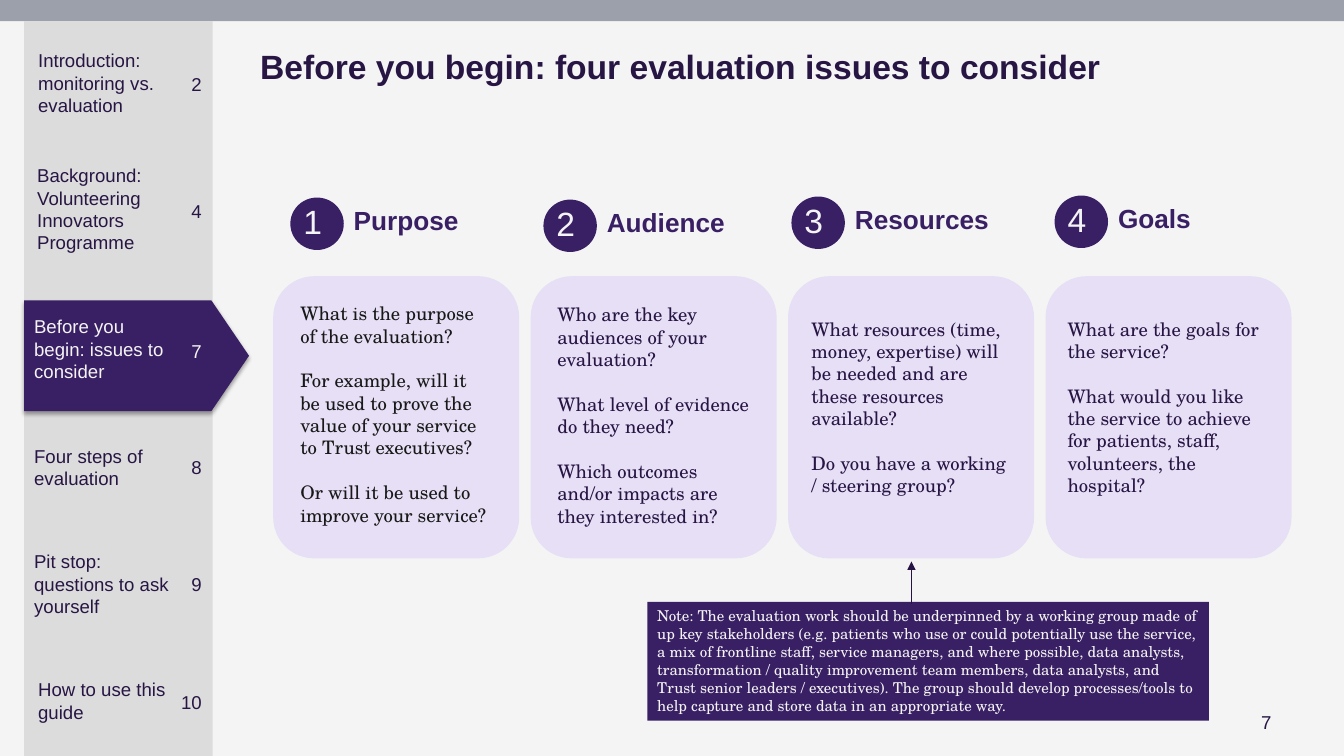
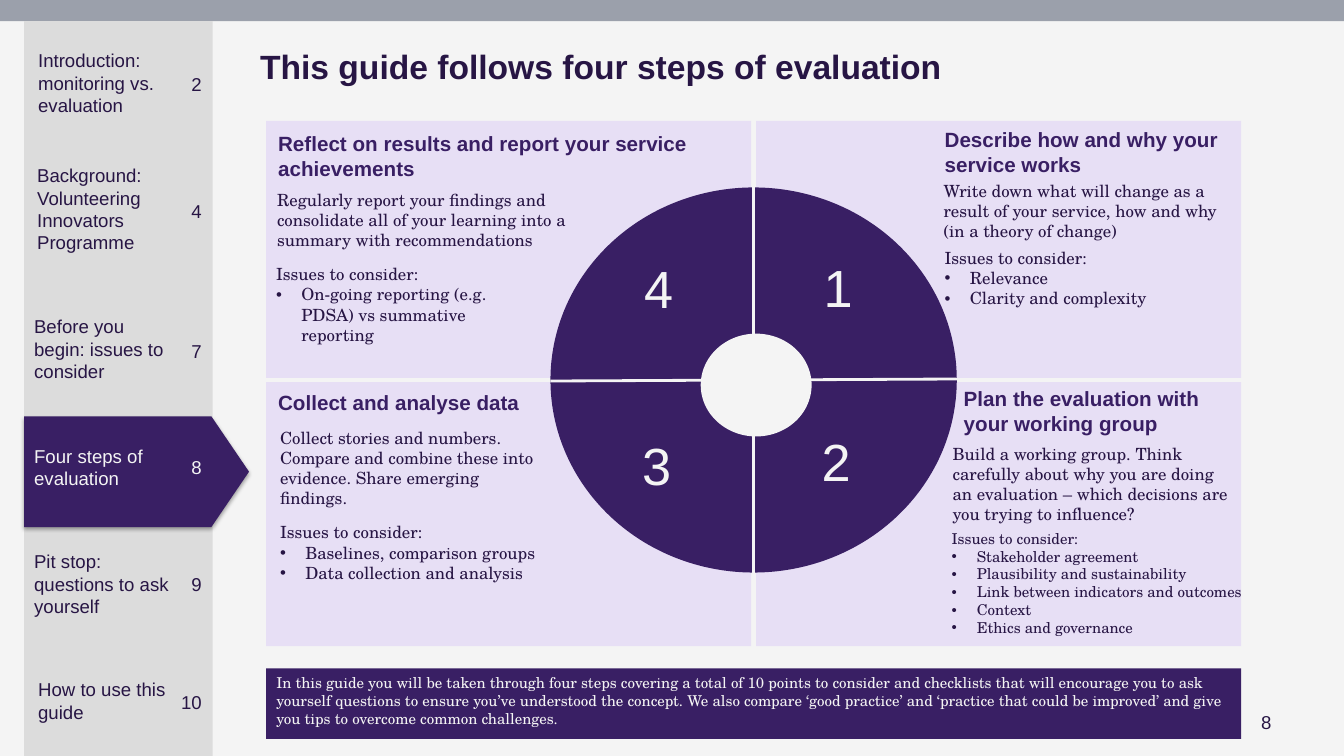
from lxml.etree import SubElement
from pptx import Presentation
from pptx.dml.color import RGBColor
from pptx.enum.shapes import MSO_CONNECTOR, MSO_SHAPE
from pptx.enum.text import MSO_ANCHOR, MSO_AUTO_SIZE, PP_ALIGN
from pptx.oxml.ns import qn
from pptx.util import Inches, Pt

# Shared style
COLORS = {
    "background": "F4F4F4", "band": "9BA0AB", "panel": "DCDCDC",
    "purple": "391F64", "lilac": "E7DFF5", "ink": "271544",
    "arrow": "261344", "black": "181818", "white": "F4F4F4",
}
SANS, SERIF = "Arial", "TeX Gyre Schola"

# Navigation: label, label left, label top, page, page top
NAVIGATION = [
    ("Introduction: monitoring vs. evaluation", 0.28, 0.44, 2, 0.67),
    ("Background: Volunteering Innovators Programme", 0.27, 1.58, 4, 1.93),
    ("Before you begin: issues to consider", 0.24, 3.08, 7, 3.32),
    ("Four steps of evaluation", 0.24, 4.36, 8, 4.47),
    ("Pit stop: questions to ask yourself", 0.24, 5.41, 9, 5.63),
    ("How to use this guide", 0.28, 6.68, 10, 6.81),
]

# Issues: heading, badge left and top, text left, top and width, colour, questions
ISSUES = [
    ("Purpose", 2.88, 1.96, 2.88, 2.95, 2.08, "black", [
        "What is the purpose of the evaluation?",
        "For example, will it be used to prove the value of your service "
        "to Trust executives?",
        "Or will it be used to improve your service?"]),
    ("Audience", 5.39, 1.98, 5.43, 2.96, 2.16, "ink", [
        "Who are the key audiences of your evaluation?",
        "What level of evidence do they need?",
        "Which outcomes and/or impacts are they interested in?"]),
    ("Resources", 7.85, 1.95, 7.95, 3.1, 2.16, "ink", [
        "What resources (time, money, expertise) will be needed and are "
        "these resources available?",
        "Do you have a working / steering group?"]),
    ("Goals", 10.46, 1.94, 10.49, 3.1, 2.16, "ink", [
        "What are the goals for the service?",
        "What would you like the service to achieve for patients, staff, "
        "volunteers, the hospital?"]),
]
NOTE = (
    "Note: The evaluation work should be underpinned by a working group made "
    "of up key stakeholders (e.g. patients who use or could potentially use "
    "the service, a mix of frontline staff, service managers, and where "
    "possible, data analysts, transformation / quality improvement team "
    "members, data analysts, and Trust senior leaders / executives). The group "
    "should develop processes/tools to help capture and store data in an "
    "appropriate way.")

# Steps: each text comes with its left, top, width and height
STEPS = [
    {"number": ("1", 8.07, 2.48),
     "heading": ("Describe how and why your service works", 9.27, 1.21, 2.98, 0.59),
     "summary": ("Write down what will change as a result of your service, "
                 "how and why (in a theory of change)", 9.26, 1.74, 3.12, 0.71),
     "issues": (["Relevance", "Clarity and complexity"], 9.27, 2.41, 2.98, 0.86),
     "issue_size": 12},
    {"number": ("2", 8.05, 4.21),
     "heading": ("Plan the evaluation with your working group",
                 9.46, 3.78, 2.88, 0.59),
     "summary": ("Build a working group. Think carefully about why you are doing "
                 "an evaluation – which decisions are you trying to influence?",
                 9.35, 4.35, 2.98, 0.91),
     "issues": (["Stakeholder agreement", "Plausibility and sustainability",
                 "Link between indicators and outcomes", "Context",
                 "Ethics and governance"], 9.34, 5.2, 3.25, 1.18),
     "issue_size": 10.7},
    {"number": ("3", 6.27, 4.25),
     "heading": ("Collect and analyse data", 2.66, 3.82, 2.64, 0.35),
     "summary": ("Collect stories and numbers. Compare and combine these into "
                 "evidence. Share emerging findings.", 2.68, 4.19, 2.8, 0.71),
     "issues": (["Baselines, comparison groups", "Data collection and analysis"],
                2.68, 5.13, 3.3, 0.71),
     "issue_size": 12},
    {"number": ("4", 6.29, 2.49),
     "heading": ("Reflect on results and report your service achievements",
                 2.66, 1.25, 4.46, 0.59),
     "summary": ("Regularly report your findings and consolidate all of your "
                 "learning into a summary with recommendations",
                 2.65, 1.83, 3.33, 0.71),
     "issues": (["On-going reporting (e.g. PDSA) vs summative reporting"],
                2.64, 2.57, 2.83, 0.71),
     "issue_size": 12},
]
BANNER = (
    "In this guide you will be taken through four steps covering a total of 10 "
    "points to consider and checklists that will encourage you to ask yourself "
    "questions to ensure you’ve understood the concept. We also compare ‘good "
    "practice’ and ‘practice that could be improved’ and give you tips to "
    "overcome common challenges.")


# Drawing helpers
def rgb(name):
    return RGBColor.from_string(COLORS[name])


def place(shape, left, top, width, height):
    shape.left, shape.top = Inches(left), Inches(top)
    shape.width, shape.height = Inches(width), Inches(height)


def write(shape, lines, size, color="ink", font=SANS, bold=False,
          align=PP_ALIGN.LEFT, anchor=MSO_ANCHOR.TOP, gap=0):
    frame = shape.text_frame
    frame.text = "\n".join(lines)
    frame.word_wrap = True
    frame.auto_size = MSO_AUTO_SIZE.NONE
    frame.vertical_anchor = anchor
    for index, paragraph in enumerate(frame.paragraphs):
        paragraph.alignment = align
        paragraph.space_before = Pt(gap if index else 0)
        for run in paragraph.runs:
            run.font.name, run.font.size, run.font.bold = font, Pt(size), bold
            run.font.color.rgb = rgb(color)


def set_bullet(paragraph, character=None):
    properties = paragraph._p.get_or_add_pPr()
    indent = Inches(0.25) if character else 0
    properties.set("marL", str(indent))
    properties.set("indent", str(-indent))
    if character:
        SubElement(properties, qn("a:buFont"), typeface="Arial")
        SubElement(properties, qn("a:buChar"), char=character)
    else:
        SubElement(properties, qn("a:buNone"))


def add_text(shapes, lines, left, top, width, height, size, **style):
    box = shapes.add_textbox(*map(Inches, (left, top, width, height)))
    write(box, lines, size, **style)
    return box


def add_block(shapes, kind, left, top, width, height, color):
    block = shapes.add_shape(kind, *map(Inches, (left, top, width, height)))
    block.shadow.inherit = False
    block.fill.solid()
    block.fill.fore_color.rgb = rgb(color)
    block.line.fill.background()
    return block


def add_line(shapes, start, end, color, width, arrow=False):
    line = shapes.add_connector(MSO_CONNECTOR.STRAIGHT, *map(Inches, start + end))
    line.line.color.rgb = rgb(color)
    line.line.width = Pt(width)
    properties = line.element.spPr
    if arrow:
        SubElement(properties.find(qn("a:ln")), qn("a:tailEnd"), type="triangle")
    SubElement(properties, qn("a:effectLst"))


def add_soft_shadow(shape):
    effects = shape.element.spPr.find(qn("a:effectLst"))
    shadow = SubElement(effects, qn("a:outerShdw"), blurRad=str(Pt(3.1)),
                        dist=str(Pt(1.8)), dir="5400000", rotWithShape="0")
    color = SubElement(shadow, qn("a:srgbClr"), val="000000")
    SubElement(color, qn("a:alpha"), val="35000")


# Parts shared by the slides
def prepare_master(presentation, slide):
    master = presentation.slide_master
    master.background.fill.solid()
    master.background.fill.fore_color.rgb = rgb("background")
    for area, color in (((0.24, 0.21, 1.87, 7.29), "panel"),
                        ((0, 0, 13.33, 0.21), "band")):
        block = add_block(slide.shapes, MSO_SHAPE.RECTANGLE, *area, color)
        master.shapes.element.insert(2, block.element)


def add_frame(slide, title, current_page):
    shapes = slide.shapes
    place(shapes.title, 2.48, 0.4, 10.19, 0.52)
    write(shapes.title, [title], 24, bold=True, anchor=MSO_ANCHOR.MIDDLE)
    for label, left, top, page, page_top in NAVIGATION:
        color = "ink"
        if page == current_page:
            color = "white"
            marker = add_block(shapes, MSO_SHAPE.PENTAGON,
                               0.24, page_top - 0.34, 2.23, 1.1, "purple")
            marker.adjustments[0] = 0.34
            add_soft_shadow(marker)
        add_text(shapes, [label], left, top, 1.54, 0.77, 13.3, color=color)
        add_text(shapes, [str(page)], 0.23, page_top, 1.87, 0.33, 13.3,
                 color=color, align=PP_ALIGN.RIGHT)
    add_text(shapes, [str(current_page)], 12.41, 7, 0.46, 0.33, 13.3)


# Slide: four issues
def build_issues(slide):
    shapes = slide.shapes
    add_frame(slide, "Before you begin: four evaluation issues to consider", 7)
    card_left, card_right, card_width = 2.71, 12.81, 2.44
    pitch = (card_right - card_left - card_width) / (len(ISSUES) - 1)
    for index, issue in enumerate(ISSUES):
        heading, x, y, left, top, width, color, questions = issue
        add_block(shapes, MSO_SHAPE.ROUNDED_RECTANGLE,
                  card_left + index * pitch, 2.74, card_width, 2.8, "lilac")
        add_text(shapes, questions, left, top, width, 2.34, 13.3,
                 color=color, font=SERIF, gap=16)
        badge = shapes.add_group_shape().shapes
        add_block(badge, MSO_SHAPE.OVAL, x, y, 0.53, 0.52, "purple")
        add_text(badge, [heading], x + 0.53, y + 0.02, 1.59, 0.42, 18.7,
                 color="purple", bold=True)
        add_text(badge, [str(index + 1)], x + 0.03, y - 0.02, 0.49, 0.5, 24,
                 color="white")
    note = add_block(shapes, MSO_SHAPE.RECTANGLE, 6.42, 5.97, 5.57, 1.18, "purple")
    write(note, [NOTE], 10.7, color="white", font=SERIF)
    add_line(shapes, (9.04, 5.99), (9.04, 5.57), "arrow", 0.75, arrow=True)


# Slide: four steps
def build_steps(slide):
    shapes = slide.shapes
    add_frame(slide, "This guide follows four steps of evaluation", 8)
    for left in (2.64, 7.5):
        for top, height in ((1.2, 2.55), (3.79, 2.62)):
            add_block(shapes, MSO_SHAPE.RECTANGLE, left, top, 4.81, height, "lilac")

    wheel = shapes.add_group_shape().shapes
    add_block(wheel, MSO_SHAPE.OVAL, 5.46, 1.86, 4.03, 3.82, "purple")
    add_line(wheel, (7.47, 1.86), (7.47, 5.69), "white", 2)
    add_line(wheel, (5.46, 3.78), (9.49, 3.76), "white", 2)
    add_block(wheel, MSO_SHAPE.OVAL, 6.95, 3.31, 1.1, 1.02, "background")

    for step in STEPS:
        number, x, y = step["number"]
        add_text(wheel, [number], x, y, 0.7, 0.73, 37.3, color="white")
        heading, *area = step["heading"]
        add_text(shapes, [heading], *area, 14.7, color="purple", bold=True)
        summary, *area = step["summary"]
        add_text(shapes, [summary], *area, 12, font=SERIF)
        issues, *area = step["issues"]
        box = add_text(shapes, ["Issues to consider:"] + issues, *area,
                       step["issue_size"], font=SERIF)
        for paragraph in box.text_frame.paragraphs[1:]:
            set_bullet(paragraph, "•")

    banner = slide.placeholders[1]
    place(banner, 2.64, 6.63, 9.67, 0.7)
    banner.fill.solid()
    banner.fill.fore_color.rgb = rgb("purple")
    write(banner, [BANNER], 10.7, color="white", font=SERIF)
    set_bullet(banner.text_frame.paragraphs[0])


def main():
    presentation = Presentation()
    presentation.slide_width, presentation.slide_height = Inches(13.33), Inches(7.5)
    layouts = presentation.slide_layouts
    issues_slide = presentation.slides.add_slide(layouts.get_by_name("Title Only"))
    steps_slide = presentation.slides.add_slide(
        layouts.get_by_name("Title and Content"))
    prepare_master(presentation, issues_slide)
    build_issues(issues_slide)
    build_steps(steps_slide)
    presentation.save("out.pptx")


if __name__ == "__main__":
    main()
